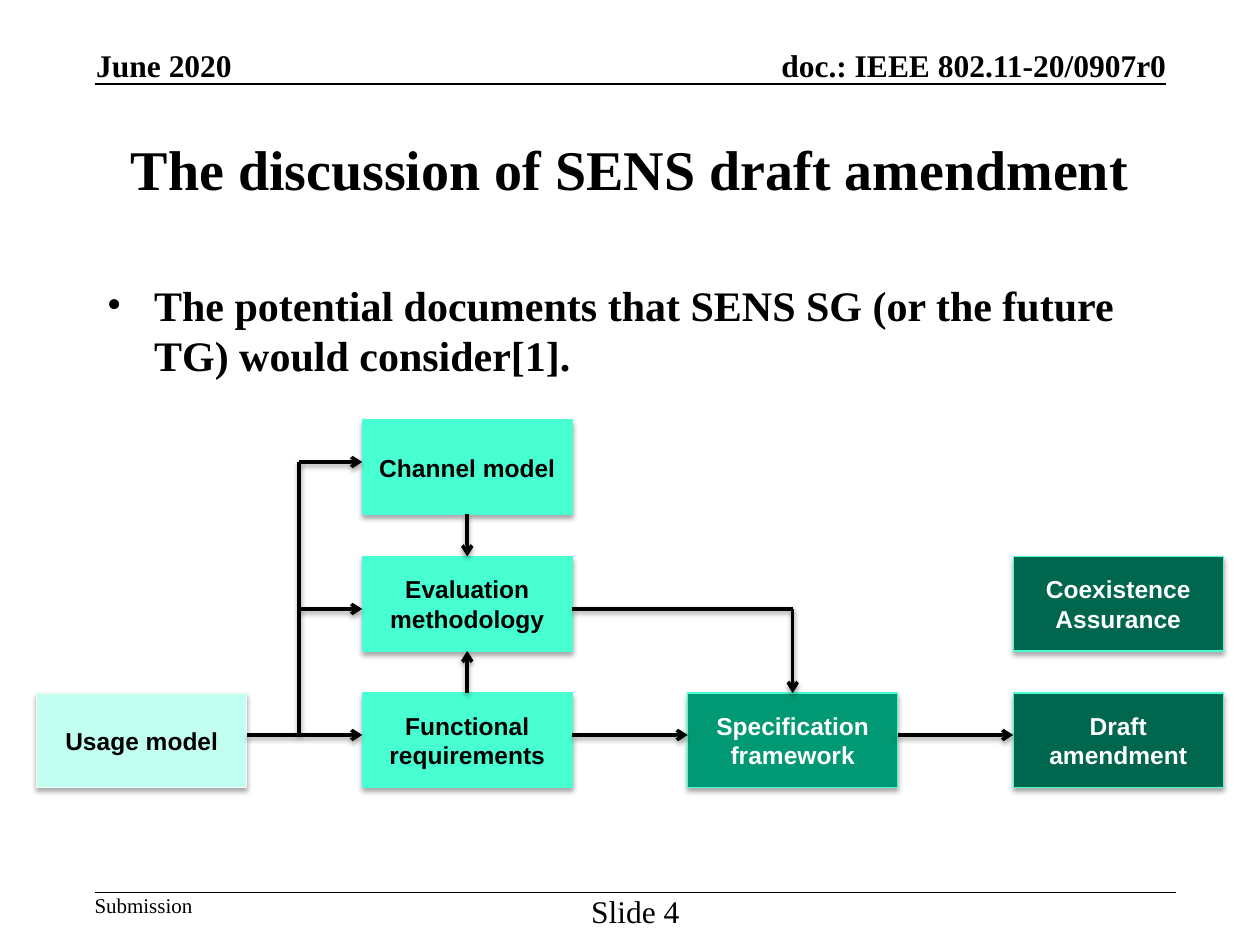
from dataclasses import dataclass
from typing import Optional

import lxml.etree
import pptx
import pptx.dml.color
import pptx.enum.shapes
import pptx.enum.text
import pptx.oxml.ns
import pptx.util

Pt = pptx.util.Pt
RGBColor = pptx.dml.color.RGBColor
Align = pptx.enum.text.PP_ALIGN
Anchor = pptx.enum.text.MSO_ANCHOR
qn = pptx.oxml.ns.qn

BLACK = RGBColor(0x00, 0x00, 0x00)
WHITE = RGBColor(0xFF, 0xFF, 0xFF)
PALE = RGBColor(0xC2, 0xFF, 0xF0)
PALE_EDGE = RGBColor(0xEE, 0xF9, 0xF4)
MINT = RGBColor(0x47, 0xFF, 0xD1)
GREEN = RGBColor(0x00, 0x99, 0x73)
DARK = RGBColor(0x00, 0x66, 0x4D)

SERIF = "Times New Roman"
SANS = "Arial"
BOX_WIDTH, BOX_HEIGHT = 120, 54
LEFT, TOP = 21, 240
COLUMN_PITCH, ROW_PITCH = 186, 78
TRUNK_X = 171
CHANNEL_Y, EVALUATION_Y, MAIN_Y = 264, 348, 420
SIDE_TOP, SIDE_BOTTOM = 0, 2


@dataclass(frozen=True)
class Label:
    text: str
    left: float
    top: float
    width: float
    height: float
    size: float
    bold: bool = True
    align: Align = Align.LEFT
    anchor: Anchor = Anchor.TOP
    wrap: bool = False
    bullet: bool = False


@dataclass(frozen=True)
class Box:
    text: str
    column: int
    row: int
    fill: RGBColor
    edge: RGBColor = MINT
    color: RGBColor = BLACK

    @property
    def left(self) -> float:
        return LEFT + self.column * COLUMN_PITCH

    @property
    def right(self) -> float:
        return self.left + BOX_WIDTH

    @property
    def center(self) -> float:
        return self.left + BOX_WIDTH / 2

    @property
    def top(self) -> float:
        return TOP + self.row * ROW_PITCH

    @property
    def bottom(self) -> float:
        return self.top + BOX_HEIGHT


@dataclass(frozen=True)
class Link:
    start: tuple[float, float]
    end: tuple[float, float]
    arrow: bool = True
    source: Optional[Box] = None
    target: Optional[Box] = None
    source_side: int = SIDE_BOTTOM
    target_side: int = SIDE_TOP


LABELS = [
    Label("doc.: IEEE 802.11-20/0907r0", 408, 26.5, 258.5, 21.6, 18, align=Align.RIGHT, anchor=Anchor.BOTTOM),
    Label("June 2020", 55, 26.5, 80, 21.6, 18, anchor=Anchor.BOTTOM),
    Label("Submission", 54, 510, 60, 14.4, 12, bold=False),
    Label("Slide 4", 333, 510, 60, 21.6, 18, bold=False, align=Align.CENTER),
    Label("The discussion of SENS draft amendment", 54, 54, 612, 84, 32,
          align=Align.CENTER, anchor=Anchor.MIDDLE, wrap=True),
    Label("The potential documents that SENS SG (or the future TG) would consider[1].",
          54, 156, 612, 96, 24, wrap=True, bullet=True),
]

USAGE = Box("Usage model", 0, 2, PALE, PALE_EDGE)
CHANNEL = Box("Channel model", 1, 0, MINT)
EVALUATION = Box("Evaluation methodology", 1, 1, MINT)
FUNCTIONAL = Box("Functional requirements", 1, 2, MINT)
SPECIFICATION = Box("Specification framework", 2, 2, GREEN, color=WHITE)
DRAFT = Box("Draft amendment", 3, 2, DARK, color=WHITE)
COEXISTENCE = Box("Coexistence Assurance", 3, 1, DARK, color=WHITE)
BOXES = [USAGE, CHANNEL, EVALUATION, FUNCTIONAL, SPECIFICATION, DRAFT, COEXISTENCE]

LINKS = [
    Link((TRUNK_X, EVALUATION_Y), (EVALUATION.left, EVALUATION_Y)),
    Link((TRUNK_X, CHANNEL_Y), (CHANNEL.left, CHANNEL_Y)),
    Link((TRUNK_X, CHANNEL_Y), (TRUNK_X, MAIN_Y), arrow=False),
    Link((USAGE.right, MAIN_Y), (FUNCTIONAL.left, MAIN_Y)),
    Link((EVALUATION.right, EVALUATION_Y), (SPECIFICATION.center, EVALUATION_Y), arrow=False),
    Link((CHANNEL.center, CHANNEL.bottom), (EVALUATION.center, EVALUATION.top),
         source=CHANNEL, target=EVALUATION),
    Link((FUNCTIONAL.center, FUNCTIONAL.top), (EVALUATION.center, EVALUATION.bottom),
         source=FUNCTIONAL, target=EVALUATION, source_side=SIDE_TOP, target_side=SIDE_BOTTOM),
    Link((SPECIFICATION.center, EVALUATION_Y), (SPECIFICATION.center, SPECIFICATION.top),
         target=SPECIFICATION),
    Link((FUNCTIONAL.right, MAIN_Y), (SPECIFICATION.left, MAIN_Y)),
    Link((SPECIFICATION.right, MAIN_Y), (DRAFT.left, MAIN_Y)),
]


def add_shadow(effects, distance: float, opacity: int) -> None:
    shadow = lxml.etree.SubElement(
        effects, qn("a:outerShdw"), blurRad=str(Pt(3.1)), dist=str(Pt(distance)),
        dir="5400000", rotWithShape="0")
    color = lxml.etree.SubElement(shadow, qn("a:srgbClr"), val="000000")
    lxml.etree.SubElement(color, qn("a:alpha"), val=str(opacity * 1000))


def add_run(paragraph, text: str, font: str, size: float, color: RGBColor, bold: bool) -> None:
    run = paragraph.add_run()
    run.text = text
    run.font.name = font
    run.font.size = Pt(size)
    run.font.bold = bold
    run.font.color.rgb = color


def add_label(slide, label: Label) -> None:
    shape = slide.shapes.add_textbox(Pt(label.left), Pt(label.top), Pt(label.width), Pt(label.height))
    frame = shape.text_frame
    frame.word_wrap = label.wrap
    frame.vertical_anchor = label.anchor
    if not label.wrap:
        frame.margin_left = frame.margin_right = frame.margin_top = frame.margin_bottom = 0
    paragraph = frame.paragraphs[0]
    paragraph.alignment = label.align
    if label.bullet:
        paragraph.space_before = Pt(4.8)
        properties = paragraph._p.get_or_add_pPr()
        properties.set("marL", str(Pt(27)))
        properties.set("indent", str(Pt(-27)))
        lxml.etree.SubElement(properties, qn("a:buFont"), typeface=SERIF)
        lxml.etree.SubElement(properties, qn("a:buChar"), char="•")
    add_run(paragraph, label.text, SERIF, label.size, BLACK, label.bold)


def add_box(slide, box: Box):
    shape = slide.shapes.add_shape(
        pptx.enum.shapes.MSO_SHAPE.RECTANGLE, Pt(box.left), Pt(box.top), Pt(BOX_WIDTH), Pt(BOX_HEIGHT))
    shape.fill.solid()
    shape.fill.fore_color.rgb = box.fill
    shape.line.color.rgb = box.edge
    shape.line.width = Pt(0.75)
    shape.shadow.inherit = False
    add_shadow(shape._element.spPr.find(qn("a:effectLst")), 1.8, 35)
    frame = shape.text_frame
    frame.word_wrap = True
    frame.vertical_anchor = Anchor.MIDDLE
    paragraph = frame.paragraphs[0]
    paragraph.alignment = Align.CENTER
    add_run(paragraph, box.text, SANS, 14, box.color, True)
    return shape


def add_line(slide, start: tuple[float, float], end: tuple[float, float], width: float):
    connector = slide.shapes.add_connector(
        pptx.enum.shapes.MSO_CONNECTOR.STRAIGHT, Pt(start[0]), Pt(start[1]), Pt(end[0]), Pt(end[1]))
    connector.line.color.rgb = BLACK
    connector.line.width = Pt(width)
    effects = lxml.etree.SubElement(connector._element.spPr, qn("a:effectLst"))
    return connector, effects


def add_link(slide, link: Link, shapes: dict) -> None:
    connector, effects = add_line(slide, link.start, link.end, 2)
    add_shadow(effects, 1.6, 38)
    if link.arrow:
        lxml.etree.SubElement(connector.line._get_or_add_ln(), qn("a:tailEnd"), type="arrow")
    if link.source:
        connector.begin_connect(shapes[link.source], link.source_side)
    if link.target:
        connector.end_connect(shapes[link.target], link.target_side)


def main() -> None:
    presentation = pptx.Presentation()
    presentation.slide_width, presentation.slide_height = Pt(720), Pt(540)
    slide = presentation.slides.add_slide(presentation.slide_layouts[6])
    add_line(slide, (54, 48), (666, 48), 1)
    add_line(slide, (54, 510), (672, 510), 1)
    for label in LABELS:
        add_label(slide, label)
    shapes = {box: add_box(slide, box) for box in BOXES}
    for link in LINKS:
        add_link(slide, link, shapes)
    presentation.save("out.pptx")


if __name__ == "__main__":
    main()
